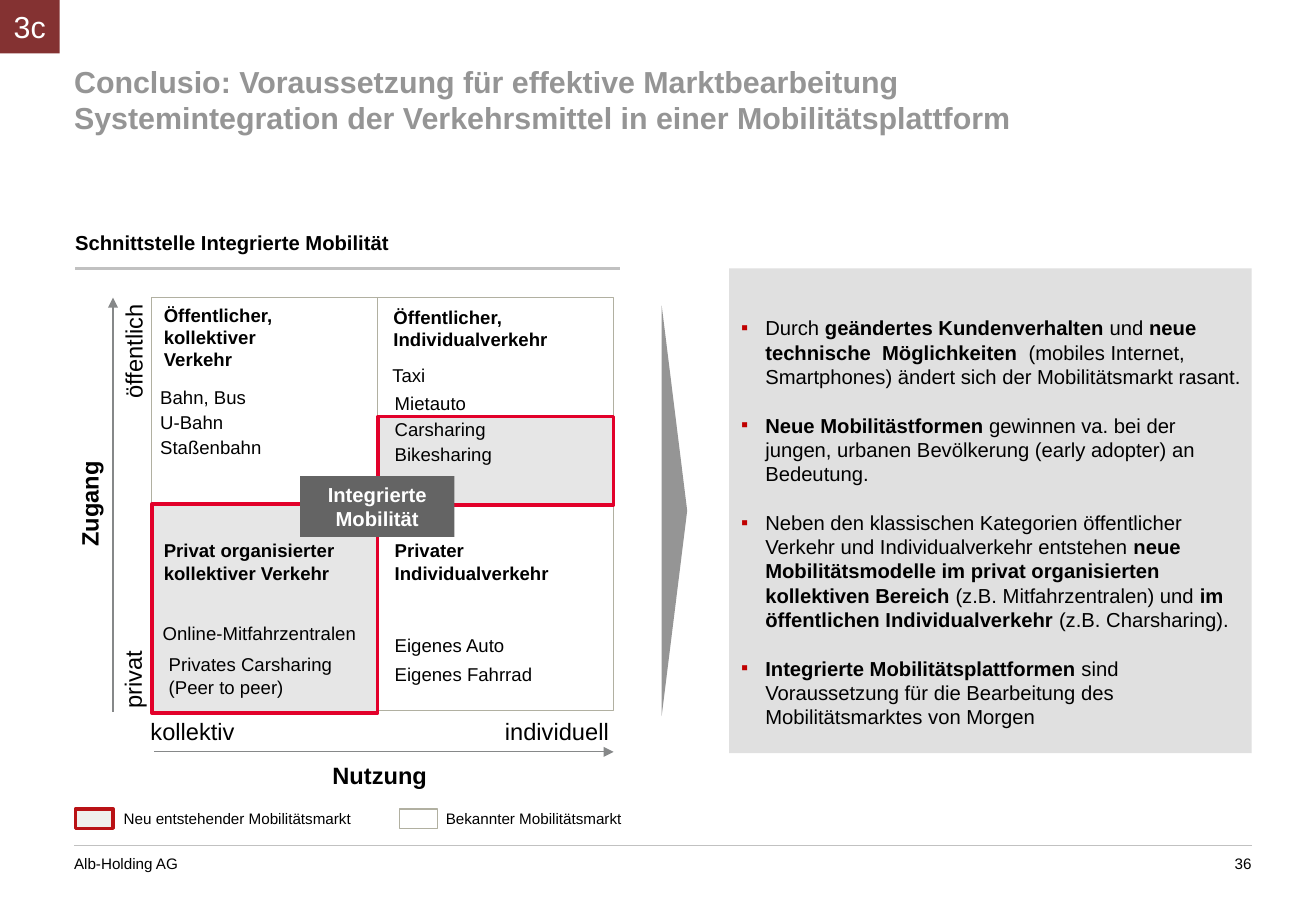
import pptx
import pptx.util
import pptx.dml.color
import pptx.enum.shapes
import pptx.enum.text
import pptx.oxml
import pptx.oxml.ns
from pptx.util import Inches

COLORS = {
    "black": "000000", "white": "FFFFFF", "title": "959595", "rule": "C1C1C1",
    "panel": "E0E0E0", "cell": "E6E6E6", "key": "EFEFEC", "edge": "B1B0A1",
    "red": "E2002A", "brick": "B91215", "bullet": "C00000", "axis": "868889",
    "hub": "646464", "badge": "843232",
}
RGB = {name: pptx.dml.color.RGBColor.from_string(code) for name, code in COLORS.items()}
KIND = pptx.enum.shapes.MSO_SHAPE
ALIGN = pptx.enum.text.PP_ALIGN
ANCHOR = pptx.enum.text.MSO_ANCHOR
FIT = pptx.enum.text.MSO_AUTO_SIZE.SHAPE_TO_FIT_TEXT
BARE = dict.fromkeys(("margin_left", "margin_top", "margin_right", "margin_bottom"), 0)
TIGHT = {"word_wrap": False, "auto_size": FIT}
AXIS = {**TIGHT, "vertical_anchor": ANCHOR.MIDDLE}

deck = pptx.Presentation()
deck.slide_width, deck.slide_height = Inches(10.83), Inches(7.5)
slide = deck.slides.add_slide(deck.slide_layouts[6])
shapes = slide.shapes


def draw(at, fill=None, edge=None, width=0.75, kind=KIND.RECTANGLE):
    item = shapes.add_shape(kind, *map(Inches, at))
    item.shadow.inherit = False
    if fill:
        item.fill.solid()
        item.fill.fore_color.rgb = RGB[fill]
    else:
        item.fill.background()
    if edge:
        item.line.color.rgb = RGB[edge]
        item.line.width = pptx.util.Pt(width)
    else:
        item.line.fill.background()
    return item


def write(item, text, size, color="black", bold=False, align=ALIGN.LEFT, **form):
    """Fill a shape: newlines part paragraphs, asterisks switch bold on and off."""
    frame = item.text_frame
    for name, value in {"word_wrap": True, **form}.items():
        setattr(frame, name, value)
    for count, line in enumerate(text.split("\n")):
        para = frame.add_paragraph() if count else frame.paragraphs[0]
        para.alignment = align
        for turn, part in enumerate(line.split("*")):
            if not part:
                continue
            run = para.add_run()
            run.text = part
            look = {"name": "Arial", "size": pptx.util.Pt(size), "bold": bold or turn % 2 == 1}
            for name, value in look.items():
                setattr(run.font, name, value)
            run.font.color.rgb = RGB[color]
    return frame


# Panel, arrow, matrix and legend keys
draw((6, 2.21, 4.3, 3.99), "panel")
draw((3.86, 4.1, 3.38, 0.21), "title", kind=KIND.ISOSCELES_TRIANGLE).rotation = 90
draw((1.25, 2.45, 1.86, 1.72), edge="edge")
draw((3.11, 2.45, 1.94, 1.69), edge="edge")
draw((3.11, 4.16, 1.94, 1.69), edge="edge")
draw((1.25, 4.15, 1.86, 1.72), "cell", "red", 2)
draw((3.11, 3.43, 1.94, 0.73), "cell", "red", 2)
draw((0.62, 6.66, 0.31, 0.16), "key", "brick", 2)
draw((3.29, 6.66, 0.31, 0.16), edge="edge")

# Rules and axes
for start, end, color, width, arrow in [
    ((0.61, 6.96), (10.3, 6.96), "rule", 1, False),
    ((0.62, 2.21), (5.1, 2.21), "rule", 1.5, False),
    ((0.93, 5.86), (0.93, 2.45), "axis", 0.75, True),
    ((1.27, 6.19), (5.05, 6.19), "axis", 0.75, True),
]:
    line = shapes.add_connector(
        pptx.enum.shapes.MSO_CONNECTOR.STRAIGHT, *map(Inches, start + end))
    line.line.color.rgb = RGB[color]
    line.line.width = pptx.util.Pt(width)
    props = line._element.spPr
    if arrow:
        tip = pptx.oxml.parse_xml(f'<a:tailEnd {pptx.oxml.ns.nsdecls("a")} type="triangle"/>')
        props.find(pptx.oxml.ns.qn("a:ln")).append(tip)
    props.append(pptx.oxml.parse_xml(f'<a:effectLst {pptx.oxml.ns.nsdecls("a")}/>'))

# Title, heading, legend and footer
for at, text, size, form in [
    ((0.61, 0.55, 7.79, 0.57),
     "Conclusio: Voraussetzung für effektive Marktbearbeitung "
     "Systemintegration der Verkehrsmittel in einer Mobilitätsplattform", 18,
     {"color": "title", "bold": True, "vertical_anchor": ANCHOR.BOTTOM, **BARE}),
    ((0.52, 1.85, 6.95, 0.32), "Schnittstelle Integrierte Mobilität", 12, {"bold": True}),
    ((0.92, 6.61, 2.14, 0.25), "Neu entstehender Mobilitätsmarkt", 9, {}),
    ((3.57, 6.61, 2.98, 0.25), "Bekannter Mobilitätsmarkt", 9, {}),
    ((0.61, 7.03, 4.53, 0.23), "Alb-Holding AG", 9, BARE),
    ((9.87, 7.03, 0.43, 0.29), "36", 9, {"align": ALIGN.RIGHT, **BARE}),
]:
    write(shapes.add_textbox(*map(Inches, at)), text, size, **form)

# Axis labels
for at, text, turn, align, bold in [
    ((0.28, 3.98, 0.91, 0.34), "Zugang", 270, ALIGN.CENTER, True),
    ((0.6, 2.73, 0.99, 0.34), "öffentlich", 270, ALIGN.RIGHT, False),
    ((0.75, 5.42, 0.68, 0.34), "privat", 270, ALIGN.LEFT, False),
    ((1.14, 5.85, 0.9, 0.34), "kollektiv", 0, ALIGN.LEFT, False),
    ((4.04, 5.85, 1.07, 0.34), "individuell", 0, ALIGN.RIGHT, False),
    ((2.63, 6.21, 0.99, 0.34), "Nutzung", 0, ALIGN.CENTER, True),
]:
    label = shapes.add_textbox(*map(Inches, at))
    label.rotation = turn
    write(label, text, 14, bold=bold, align=align, **AXIS)

# Matrix headings and the entry of two lines
for at, text, bold in [
    ((1.25, 2.45, 1.3, 0.66), "Öffentlicher,\nkollektiver\nVerkehr", True),
    ((3.14, 2.47, 1.74, 0.47), "Öffentlicher, Individualverkehr", True),
    ((1.25, 4.39, 2, 0.47), "Privat organisierter kollektiver Verkehr", True),
    ((3.15, 4.39, 1.86, 0.47), "Privater Individualverkehr", True),
    ((1.29, 5.33, 1.75, 0.47), "Privates Carsharing\n(Peer to peer)", False),
]:
    write(shapes.add_textbox(*map(Inches, at)), text, 11, bold=bold)

# Matrix entries of one line
for left, top, width, text in [
    (1.22, 3.13, 0.91, "Bahn, Bus"),
    (1.22, 3.33, 0.73, "U-Bahn"),
    (1.22, 3.54, 1.04, "Staßenbahn"),
    (3.13, 2.95, 0.49, "Taxi"),
    (3.15, 3.18, 0.79, "Mietauto"),
    (3.15, 3.39, 0.96, "Carsharing"),
    (3.15, 3.6, 1.01, "Bikesharing"),
    (1.24, 5.07, 1.79, "Online-Mitfahrzentralen"),
    (3.15, 5.17, 1.12, "Eigenes Auto"),
    (3.15, 5.41, 1.34, "Eigenes Fahrrad"),
]:
    box = shapes.add_textbox(*map(Inches, (left, top, width, 0.29)))
    write(box, text, 11, **TIGHT)

# Conclusions
points = write(
    shapes.add_textbox(*map(Inches, (6, 2.55, 4.34, 3.53))),
    "Durch *geändertes Kundenverhalten *und *neue technische  Möglichkeiten*  "
    "(mobiles Internet, Smartphones) ändert sich der Mobilitätsmarkt rasant.\n"
    "*Neue Mobilitästformen *gewinnen va. bei der jungen, urbanen Bevölkerung "
    "(early adopter) an Bedeutung.\n"
    "Neben den klassischen Kategorien öffentlicher Verkehr und Individualverkehr "
    "entstehen *neue Mobilitätsmodelle im privat organisierten kollektiven Bereich *"
    "(z.B. Mitfahrzentralen) und *im öffentlichen Individualverkehr *(z.B. Charsharing).\n"
    "*Integrierte Mobilitätsplattformen *sind Voraussetzung für die Bearbeitung des "
    "Mobilitätsmarktes von Morgen", 12)
for count, para in enumerate(points.paragraphs):
    if count:
        para.space_before = pptx.util.Pt(14.4)
    props = para._p.get_or_add_pPr()
    props.set("marL", str(Inches(0.2)))
    props.set("indent", str(-Inches(0.2)))
    for tag in (f'buClr {pptx.oxml.ns.nsdecls("a")}><a:srgbClr val="{COLORS["bullet"]}"/></a:buClr',
                f'buFont {pptx.oxml.ns.nsdecls("a")} typeface="Arial"/',
                f'buChar {pptx.oxml.ns.nsdecls("a")} char="▪"/'):
        props.append(pptx.oxml.parse_xml(f"<a:{tag}>"))

# Hub and chapter badge
write(draw((2.47, 3.92, 1.27, 0.5), "hub"), "Integrierte Mobilität", 12, "white", True,
      ALIGN.CENTER, vertical_anchor=ANCHOR.TOP)
write(draw((0, 0, 0.49, 0.44), "badge"), "3c", 18, "white", align=ALIGN.CENTER,
      vertical_anchor=ANCHOR.MIDDLE)

deck.save("out.pptx")
